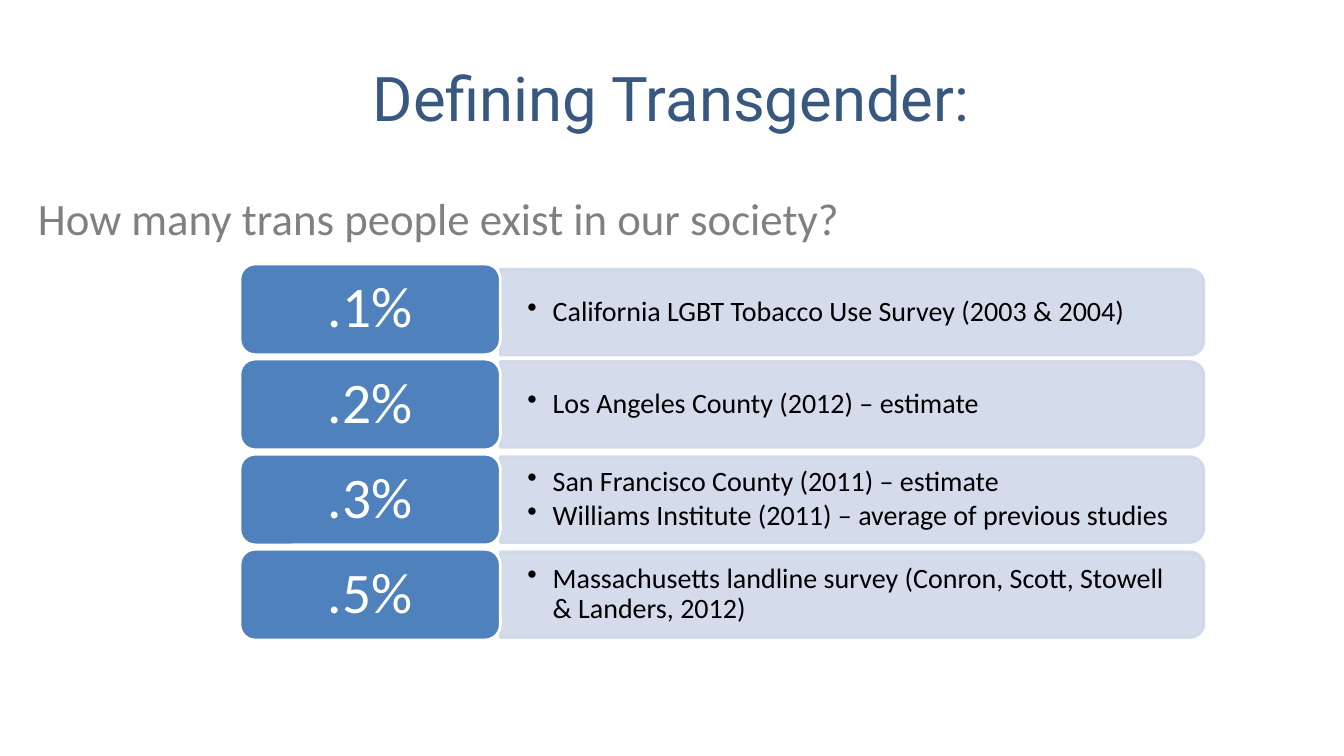
import pptx
import pptx.util
import pptx.dml.color
import pptx.enum.shapes
import pptx.enum.text
import pptx.oxml
import pptx.oxml.ns

Pt = pptx.util.Pt
RGBColor = pptx.dml.color.RGBColor
SHAPE = pptx.enum.shapes.MSO_SHAPE
ALIGN = pptx.enum.text.PP_ALIGN
MIDDLE = pptx.enum.text.MSO_ANCHOR.MIDDLE

NAVY = RGBColor(0x39, 0x58, 0x7F)
GRAY = RGBColor(0x80, 0x80, 0x80)
PALE = RGBColor(0xD0, 0xD8, 0xE8)
BLUE = RGBColor(0x4F, 0x81, 0xBD)
WHITE = RGBColor(0xFF, 0xFF, 0xFF)
BLACK = RGBColor(0, 0, 0)


def style(para, font, size, color):
    for run in para.runs:
        run.font.name = font
        run.font.size = Pt(size)
        run.font.color.rgb = color


def paint(shape, fill, line):
    shape.shadow.inherit = False
    shape.fill.solid()
    shape.fill.fore_color.rgb = fill
    shape.line.color.rgb = line
    shape.line.width = Pt(2)


deck = pptx.Presentation()
deck.slide_width = Pt(960)
deck.slide_height = Pt(540)
slide = deck.slides.add_slide(deck.slide_layouts[5])
shapes = slide.shapes

title = shapes.title
title.left, title.top, title.width, title.height = Pt(20), Pt(18), Pt(919), Pt(102)
title.text_frame.text = "Defining Transgender:"
title.text_frame.vertical_anchor = MIDDLE
title.text_frame.paragraphs[0].alignment = ALIGN.CENTER
style(title.text_frame.paragraphs[0], "Roboto", 44, NAVY)

query = shapes.add_textbox(Pt(20), Pt(132.5), Pt(919), Pt(48))
query.text_frame.word_wrap = True
query.text_frame.text = "How many trans people exist in our society?"
style(query.text_frame.paragraphs[0], "Calibri", 32, GRAY)

rates = [
    (".1%", ["California LGBT Tobacco Use Survey (2003 & 2004)"]),
    (".2%", ["Los Angeles County (2012) – estimate"]),
    (".3%", ["San Francisco County (2011) – estimate",
             "Williams Institute (2011) – average of previous studies"]),
    (".5%", ["Massachusetts landline survey (Conron, Scott, Stowell & Landers, 2012)"]),
]
left, top, wide, high, step = 171.4, 188.6, 186, 64.8, 67.92
long, thick, inner = 502.6, 61.2, 55.4
edge = left + wide

for row, (rate, studies) in enumerate(rates):
    y = top + row * step
    mid = y + high / 2 + (2 if row == 0 else 0)

    bar = shapes.add_shape(SHAPE.ROUND_2_SAME_RECTANGLE, Pt(edge + (long - thick) / 2),
                           Pt(mid - long / 2), Pt(thick), Pt(long))
    bar.rotation = 90
    paint(bar, PALE, PALE)
    for color in bar._element.spPr.iter(pptx.oxml.ns.qn("a:srgbClr")):
        color.append(pptx.oxml.parse_xml(
            f'<a:alpha {pptx.oxml.ns.nsdecls("a")} val="90000"/>'))

    box = shapes.add_textbox(Pt(edge), Pt(mid - inner / 2), Pt(499), Pt(inner))
    frame = box.text_frame
    frame.word_wrap = True
    frame.vertical_anchor = MIDDLE
    frame.margin_left = frame.margin_right = Pt(19.4)
    frame.margin_top = frame.margin_bottom = Pt(10)
    frame.text = "\n".join(studies)
    for para in frame.paragraphs:
        para.line_spacing = 0.9
        para.space_after = Pt(3)
        props = para._p.get_or_add_pPr()
        props.set("marL", str(Pt(18)))
        props.set("indent", str(Pt(-18)))
        props.append(pptx.oxml.parse_xml(
            f'<a:buChar {pptx.oxml.ns.nsdecls("a")} char="•"/>'))
        style(para, "Calibri", 20, BLACK)

    pill = shapes.add_shape(SHAPE.ROUNDED_RECTANGLE, Pt(left), Pt(y), Pt(wide), Pt(high))
    paint(pill, BLUE, WHITE)
    pill.text_frame.text = rate
    pill.text_frame.vertical_anchor = MIDDLE
    para = pill.text_frame.paragraphs[0]
    para.alignment = ALIGN.CENTER
    para.line_spacing = 0.9
    style(para, "Calibri", 41, WHITE)

deck.save("out.pptx")
